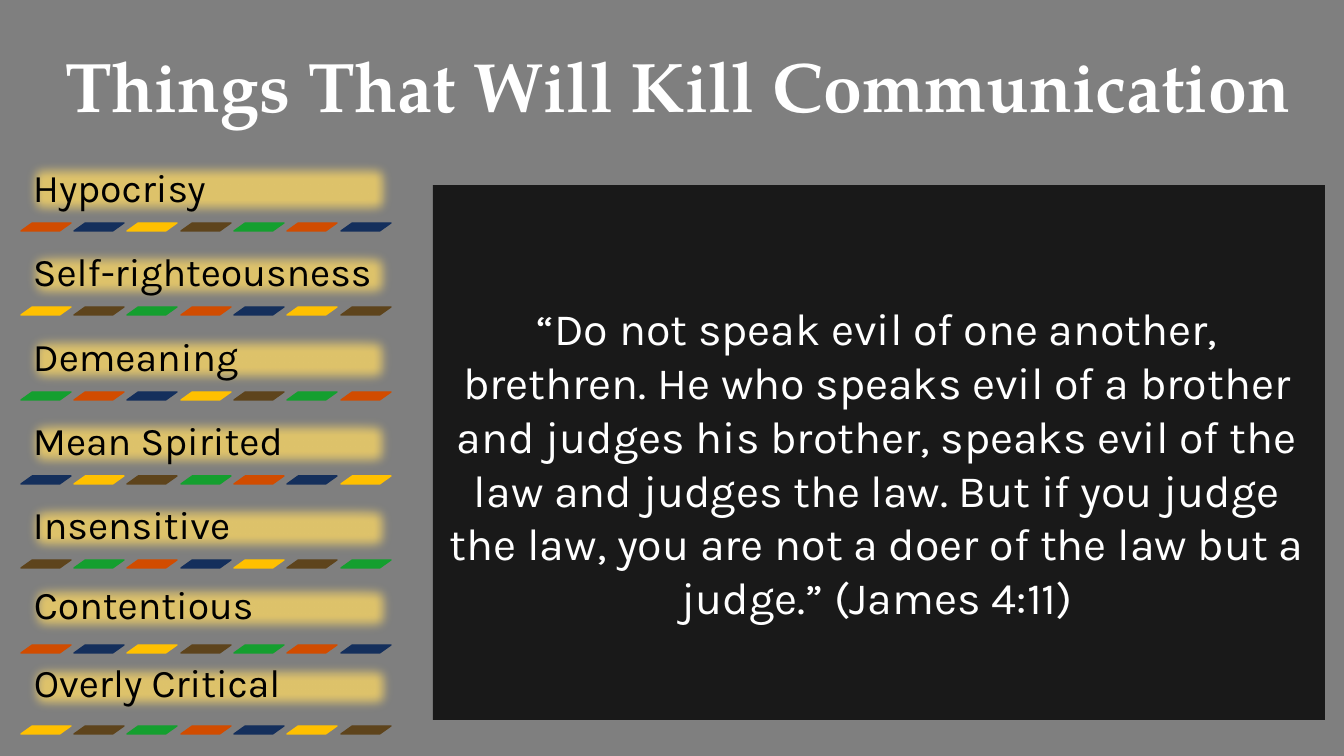
import pptx
import pptx.util
import pptx.dml.color
import pptx.enum.shapes
import pptx.enum.text
import pptx.oxml.ns
import lxml.etree

PX = 914400 / 100.8
SHAPE = pptx.enum.shapes.MSO_SHAPE
ALIGN = pptx.enum.text.PP_ALIGN
ANCHOR = pptx.enum.text.MSO_ANCHOR
STRIPE_COLOURS = ["D14C00", "142F5C", "FFC000", "5E441C", "149F2F"]


def box(*lengths):
    return [round(length * PX) for length in lengths]


def paint(colour_format, colour, alpha=100):
    colour_format.rgb = pptx.dml.color.RGBColor.from_string(colour)
    if alpha < 100:
        srgb = colour_format._xFill.find(pptx.oxml.ns.qn("a:srgbClr"))
        lxml.etree.SubElement(srgb, pptx.oxml.ns.qn("a:alpha"), val=str(alpha * 1000))


deck = pptx.Presentation()
deck.slide_width, deck.slide_height = box(1344, 756)
slide = deck.slides.add_slide(deck.slide_layouts[5])

# Grey veil over the slide and dark panel behind the verse
for bounds, alpha in [((0, 0, 1344, 756), 50), ((433, 185, 892, 535), 80)]:
    backdrop = slide.shapes.add_shape(SHAPE.RECTANGLE, *box(*bounds))
    backdrop.shadow.inherit = False
    backdrop.fill.solid()
    paint(backdrop.fill.fore_color, "000000", alpha)
    backdrop.line.fill.background()

# Title, brought in front of the backdrops
title = slide.shapes.title
backdrop._element.addnext(title._element)
title.left, title.top, title.width, title.height = box(38, 26, 1280, 102)
heading = title.text_frame
heading.margin_left = heading.margin_right = heading.margin_top = heading.margin_bottom = 0
heading.vertical_anchor = ANCHOR.BOTTOM
heading.word_wrap = True
heading.auto_size = pptx.enum.text.MSO_AUTO_SIZE.NONE
heading.paragraphs[0].alignment = ALIGN.CENTER
heading.paragraphs[0].line_spacing = 0.9
run = heading.paragraphs[0].add_run()
run.text = "Things That Will Kill Communication"
run.font.name = "TeX Gyre Pagella"
run.font.size = pptx.util.Pt(50)
run.font.bold = True
paint(run.font.color, "FFFFFF")

# Verse
verse = slide.shapes.add_textbox(*box(438, 186, 879, 528)).text_frame
verse.word_wrap = True
verse.margin_top = box(115)[0]
verse.paragraphs[0].alignment = ALIGN.CENTER
run = verse.paragraphs[0].add_run()
run.text = (
    "“Do not speak evil of one another, brethren. He who speaks evil of a brother "
    "and judges his brother, speaks evil of the law and judges the law. But if you "
    "judge the law, you are not a doer of the law but a judge.” (James 4:11)"
)
run.font.name = "Karla"
run.font.size = pptx.util.Pt(32)
paint(run.font.color, "FFFFFF")

# Communication killers: label, left, top, height, top of the stripes below
killers = [
    ("Hypocrisy", 21, 156, 67, 223),
    ("Self-righteousness", 21, 244, 63, 307),
    ("Demeaning", 21, 328, 64, 392),
    ("Mean Spirited", 21, 412, 64, 476),
    ("Insensitive", 21, 497, 63, 560),
    ("Contentious", 22, 577, 63, 645),
    ("Overly Critical", 22, 657, 61, 726),
]
for row, (killer, left, top, height, stripe_top) in enumerate(killers):
    group = slide.shapes.add_group_shape()

    # Soft-edged gold band
    band = group.shapes.add_shape(SHAPE.RECTANGLE, *box(left, top, 377, height))
    band.fill.solid()
    paint(band.fill.fore_color, "FFD966", 75)
    band.line.fill.background()
    band.shadow.inherit = False
    effects = band._element.spPr.find(pptx.oxml.ns.qn("a:effectLst"))
    lxml.etree.SubElement(effects, pptx.oxml.ns.qn("a:softEdge"), rad="112500")

    # Label
    label = group.shapes.add_textbox(*box(left, top, 377, height)).text_frame
    label.word_wrap = True
    label.vertical_anchor = ANCHOR.BOTTOM
    label.margin_left = label.margin_right = label.margin_top = label.margin_bottom = box(12)[0]
    label.paragraphs[0].line_spacing = 0.9
    label.paragraphs[0].space_after = pptx.util.Pt(24)
    run = label.paragraphs[0].add_run()
    run.text = killer
    run.font.name = "Karla"
    run.font.size = pptx.util.Pt(28)
    paint(run.font.color, "000000")

    # Stripes, with the colour cycle moved on by two in each row
    for column in range(7):
        stripe = group.shapes.add_shape(
            SHAPE.PARALLELOGRAM, *box(21 + column * 160 // 3, stripe_top, 50, 8))
        stripe.adjustments[0] = 1.41
        stripe.shadow.inherit = False
        colour = STRIPE_COLOURS[(2 * row + column) % len(STRIPE_COLOURS)]
        stripe.fill.solid()
        paint(stripe.fill.fore_color, colour)
        paint(stripe.line.color, colour)
        stripe.line.width = pptx.util.Pt(1)

deck.save("out.pptx")
